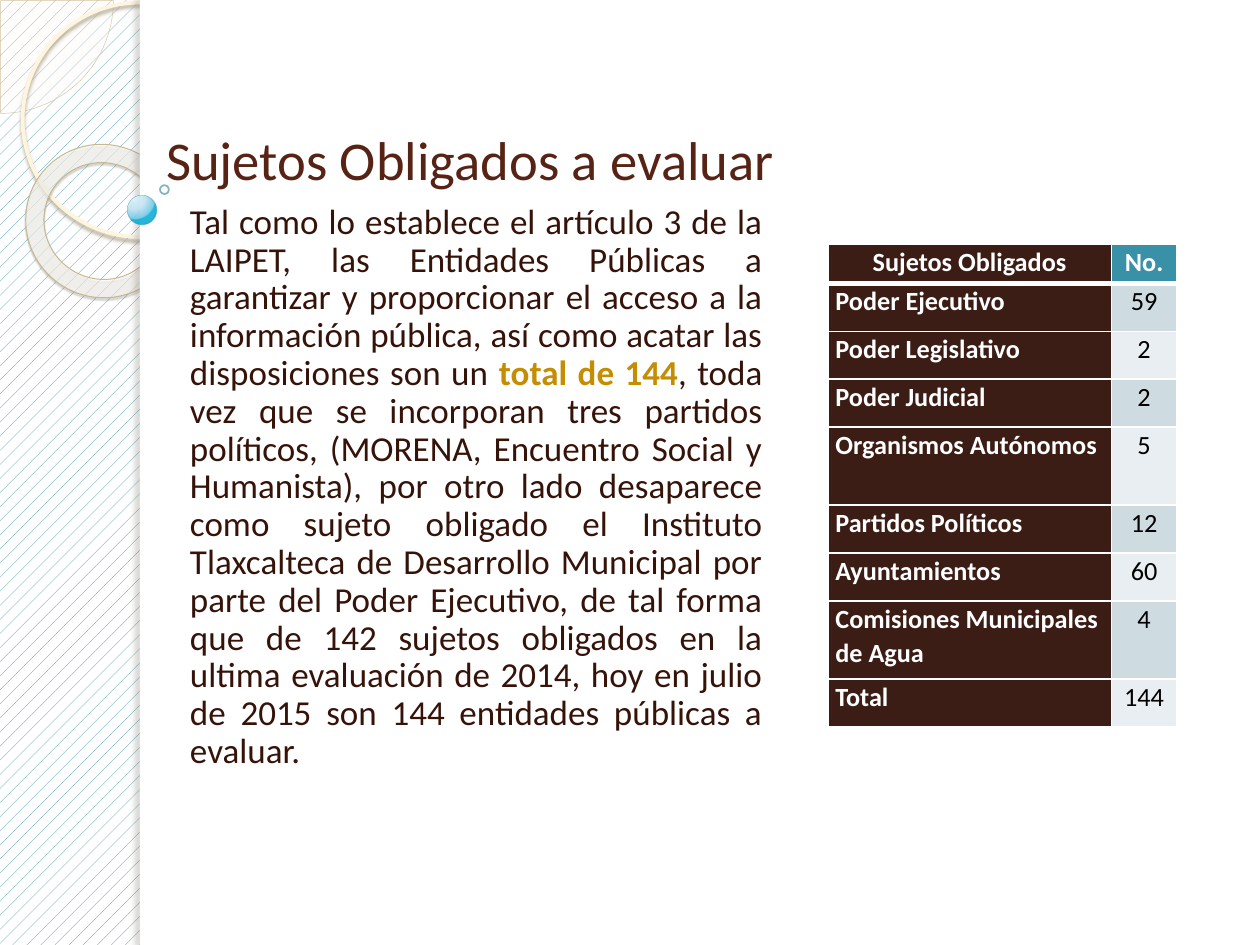
from lxml.etree import SubElement
from pptx import Presentation
from pptx.dml.color import RGBColor
from pptx.enum.dml import MSO_PATTERN
from pptx.enum.shapes import MSO_SHAPE as Shape
from pptx.enum.text import MSO_ANCHOR as Anchor, PP_ALIGN as Align
from pptx.oxml import parse_xml
from pptx.oxml.ns import nsdecls, qn
from pptx.util import Inches, Pt

COLORS = {
    "white": "FFFFFF", "black": "000000", "teal": "3891A7",
    "title": "572314", "body": "361309", "accent": "C58D01",
    "label": "3B1D15", "band_dark": "CEDCE1", "band_light": "E8EEF1",
    "pie": "FEFAF4", "pie_line": "D3C39F", "ring": "FFF5DE",
    "ring_shadow": "B0A68F", "donut_line": "C7B893",
    "donut_shadow": "5A5444", "panel_shadow": "736F63",
    "bead_line": "308EA5", "dot_line": "318093",
}
DONUT_GLOW = ([(0, "FFFCF6", 70), (70, "FFFEFB", 55), (100, "F0D28E", 60)],
              (-408, -50, 508, 150))
BEAD_GLOW = ([(0, "DAF4FF", 95), (50, "C3E3F0", 90),
              (95, "6BC7E8", 88), (100, "00ABD5", 85)], (25, 12, 75, 88))
BODY_RUNS = [
    ("Tal como lo establece el artículo 3 de la LAIPET, las Entidades Públicas a "
     "garantizar y proporcionar el acceso a la información pública, así como acatar "
     "las disposiciones son un ", "body", False),
    ("total de 144", "accent", True),
    (", toda vez que se incorporan tres partidos políticos, (MORENA, Encuentro Social "
     "y Humanista), por otro lado desaparece como sujeto obligado el Instituto "
     "Tlaxcalteca de Desarrollo Municipal por parte del Poder Ejecutivo, de tal forma "
     "que de 142 sujetos obligados en la ultima evaluación de 2014, hoy en julio de "
     "2015 son 144 entidades públicas a evaluar. ", "body", False),
]
ENTITIES = [
    ("Sujetos Obligados", "No.", 0.31),
    ("Poder Ejecutivo", "59", 0.38),
    ("Poder Legislativo", "2", 0.38),
    ("Poder Judicial", "2", 0.38),
    ("Organismos Autónomos", "5", 0.62),
    ("Partidos Políticos", "12", 0.38),
    ("Ayuntamientos", "60", 0.38),
    ("Comisiones Municipales de Agua", "4", 0.62),
    ("Total", "144", 0.38),
]


def rgb(name):
    """Return the palette colour of that name."""
    return RGBColor.from_string(COLORS[name])


def set_alpha(color, percent):
    """Give a colour element an opacity."""
    SubElement(color, qn("a:alpha")).set("val", str(percent * 1000))


class SlideBuilder:
    """Holds the style and the current slide."""

    font = "Calibri"

    def __init__(self, slide):
        self.slide = slide

    def background(self):
        fill = self.slide.background.fill
        fill.patterned()
        fill.pattern = MSO_PATTERN.PERCENT_10
        fill.fore_color.rgb = rgb("teal")
        fill.back_color.rgb = rgb("white")

    def ornament(self, kind, box, fill=None, alpha=100, line=None, line_alpha=100,
                 glow=None, shadow=None, adjustments=(), rotation=0):
        shape = self.slide.shapes.add_shape(kind, *map(Inches, box))
        shape.rotation = rotation
        for index, value in enumerate(adjustments):
            shape.adjustments[index] = value
        properties = shape._element.spPr
        if glow:
            properties.insert(2, self.radial(*glow))
        elif fill:
            shape.fill.solid()
            shape.fill.fore_color.rgb = rgb(fill)
            set_alpha(properties.find(".//" + qn("a:srgbClr")), alpha)
        else:
            shape.fill.background()
        if line:
            shape.line.color.rgb = rgb(line[0])
            shape.line.width = Pt(line[1])
            set_alpha(shape.line._ln.find(".//" + qn("a:srgbClr")), line_alpha)
        else:
            shape.line.fill.background()
        shape.shadow.inherit = False
        if shadow:
            self.cast(properties.find(qn("a:effectLst")), *shadow)

    def radial(self, stops, focus):
        gradient = parse_xml(f'<a:gradFill {nsdecls("a")} rotWithShape="1"><a:gsLst/>'
                             '<a:path path="circle"><a:fillToRect/></a:path></a:gradFill>')
        for position, color, alpha in stops:
            stop = SubElement(gradient[0], qn("a:gs"), pos=str(position * 1000))
            set_alpha(SubElement(stop, qn("a:srgbClr"), val=color), alpha)
        for side, percent in zip("ltrb", focus):
            gradient[1][0].set(side, str(percent * 1000))
        return gradient

    def cast(self, effects, color, alpha, blur, distance, angle):
        shadow = SubElement(effects, qn("a:outerShdw"), blurRad=str(Pt(blur)),
                            dist=str(Pt(distance)), dir=str(angle * 60000),
                            algn="tl", rotWithShape="0")
        set_alpha(SubElement(shadow, qn("a:srgbClr"), val=COLORS[color]), alpha)

    def style(self, font, size, color=None, bold=None):
        font.name, font.size, font.bold = self.font, Pt(size), bold
        if color:
            font.color.rgb = rgb(color)

    def text_frame(self, box):
        frame = self.slide.shapes.add_textbox(*map(Inches, box)).text_frame
        frame.word_wrap = True
        return frame

    def title(self, text, box):
        frame = self.text_frame(box)
        frame.vertical_anchor = Anchor.BOTTOM
        heading = frame.paragraphs[0]
        heading.text = text
        self.style(heading.font, 31.2, "title")

    def body(self, runs, box):
        frame = self.text_frame(box)
        frame.margin_top = 0
        passage = frame.paragraphs[0]
        passage.alignment = Align.JUSTIFY
        passage.line_spacing = 0.9
        passage.space_before = Pt(6)
        passage._p.get_or_add_pPr().set("marL", str(Inches(0.03)))
        self.style(passage.font, 20)
        for text, color, bold in runs:
            run = passage.add_run()
            run.text = text
            run.font.color.rgb = rgb(color)
            run.font.bold = bold

    def cell(self, cell, text, fill, color, bold, align, top, bottom):
        cell.margin_left = cell.margin_right = Inches(0.06)
        cell.margin_top = cell.margin_bottom = 0
        cell.fill.solid()
        cell.fill.fore_color.rgb = rgb(fill)
        entry = cell.text_frame.paragraphs[0]
        entry.text = text
        entry.alignment = align
        entry.line_spacing = 1.07
        self.style(entry.font, 15, color, bold)
        borders = (("L", 1), ("R", 1), ("T", top), ("B", bottom))
        for index, (side, width) in enumerate(borders):
            cell._tc.get_or_add_tcPr().insert(index, parse_xml(
                f'<a:ln{side} {nsdecls("a")} w="{Pt(width)}"><a:solidFill>'
                f'<a:srgbClr val="{COLORS["white"]}"/></a:solidFill></a:ln{side}>'))

    def table(self, rows, box, widths):
        table = self.slide.shapes.add_table(
            len(rows), len(widths), *map(Inches, box)).table
        for column, width in zip(table.columns, widths):
            column.width = Inches(width)
        for index, (label, count, height) in enumerate(rows):
            table.rows[index].height = Inches(height)
            header = index == 0
            band = "teal" if header else "band_dark" if index % 2 else "band_light"
            edges = (3 if index == 1 else 1, 3 if header else 1)
            self.cell(table.cell(index, 0), label, "label", "white", True,
                      Align.CENTER if header else Align.LEFT, *edges)
            self.cell(table.cell(index, 1), count, band,
                      "white" if header else "black", header, Align.CENTER, *edges)


def main():
    """Build the slide and save it."""
    deck = Presentation()
    deck.slide_width, deck.slide_height = Inches(10), Inches(7.5)
    page = SlideBuilder(deck.slides.add_slide(deck.slide_layouts[6]))
    page.background()
    page.ornament(Shape.PIE, (-0.89, -0.89, 1.79, 1.79), fill="pie", alpha=33,
                  line=("pie_line", 0.25), adjustments=(0, 54.02))
    page.ornament(Shape.OVAL, (0.18, 0.02, 1.86, 1.86), line=("ring", 2.15),
                  shadow=("ring_shadow", 85, 2, 2, 90))
    page.ornament(Shape.DONUT, (0.2, 1.15, 1.23, 1.21), glow=DONUT_GLOW,
                  line=("donut_line", 0.58), shadow=("donut_shadow", 35, 1, 1.2, 75),
                  adjustments=(0.12,), rotation=38.6)
    page.ornament(Shape.RECTANGLE, (1.11, 0, 8.89, 7.5), fill="white")
    page.ornament(Shape.RECTANGLE, (1.11, 0, 0.08, 7.5), fill="white",
                  shadow=("panel_shadow", 25, 3, 3, 180))
    page.ornament(Shape.OVAL, (1.01, 1.55, 0.23, 0.23), glow=BEAD_GLOW,
                  line=("bead_line", 0.16), line_alpha=60)
    page.ornament(Shape.OVAL, (1.27, 1.47, 0.07, 0.07),
                  line=("dot_line", 1), line_alpha=60)
    page.title("Sujetos Obligados a evaluar", (1.22, 1, 7.24, 0.57))
    page.body(BODY_RUNS, (1.38, 1.62, 4.77, 4.64))
    page.table(ENTITIES, (6.57, 1.94, 2.77, 3.86), (2.25, 0.52))
    deck.save("out.pptx")


if __name__ == "__main__":
    main()
